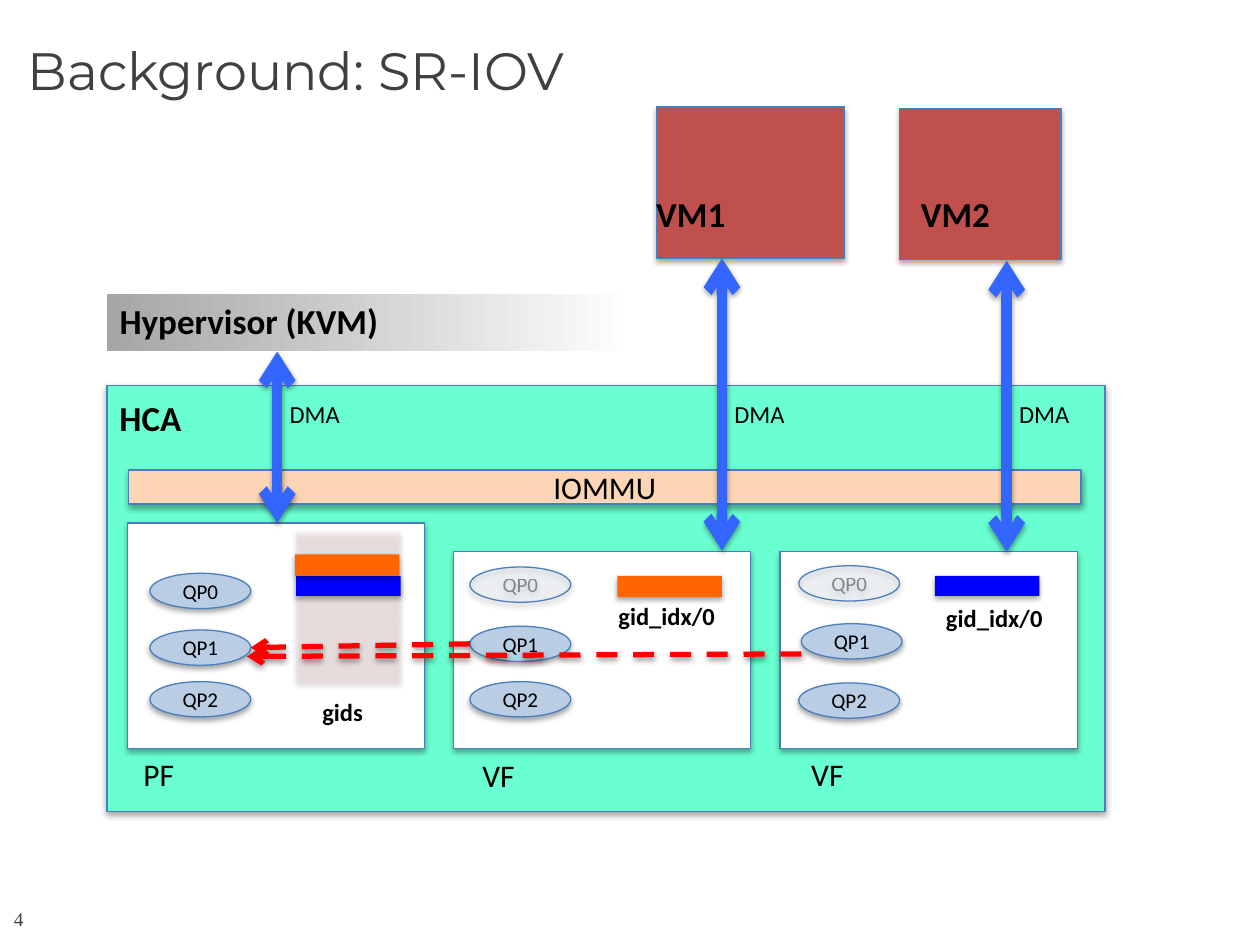
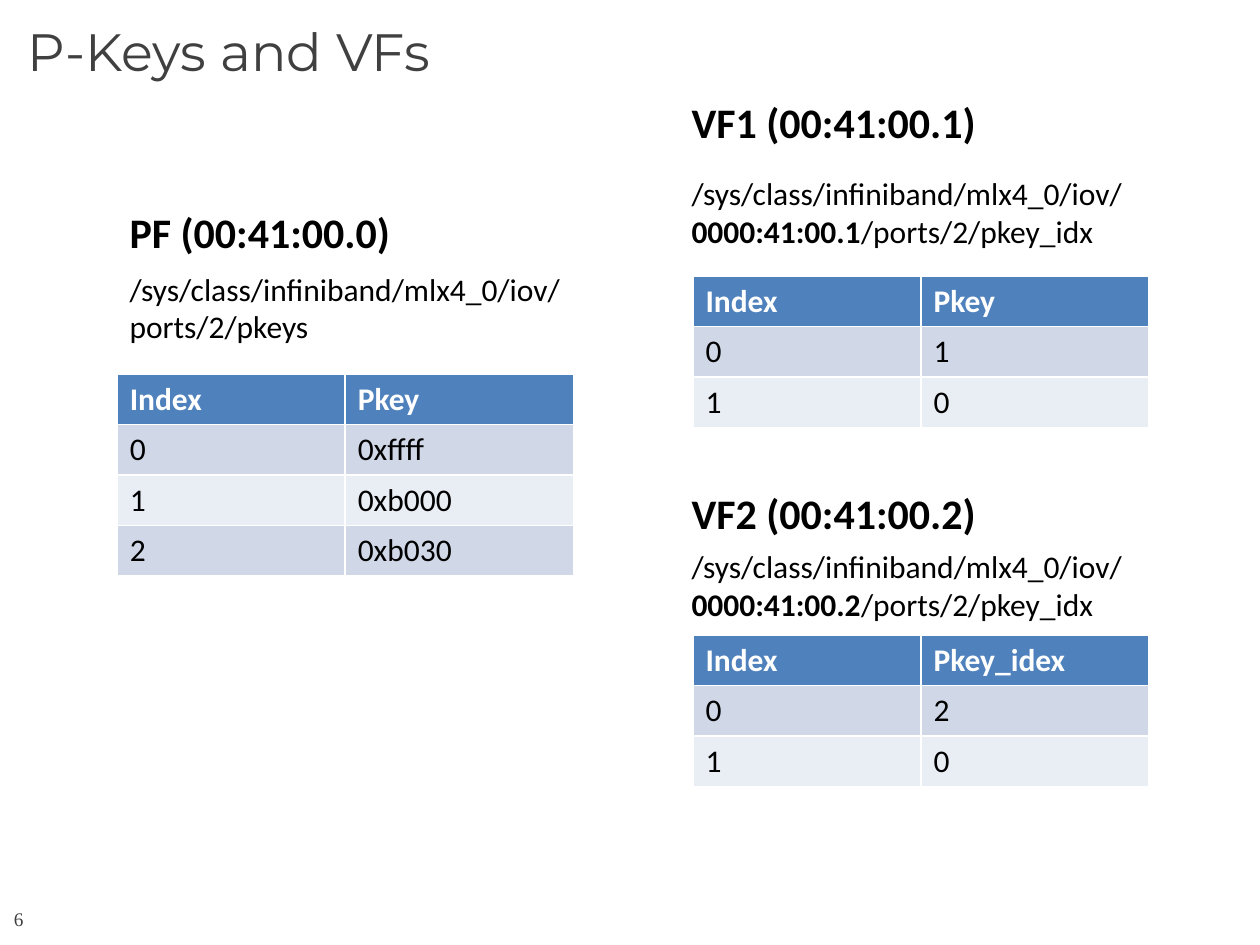
from lxml.etree import SubElement
from pptx import Presentation
from pptx.dml.color import RGBColor
from pptx.enum.dml import MSO_LINE
from pptx.enum.shapes import MSO_CONNECTOR, MSO_SHAPE
from pptx.enum.text import MSO_ANCHOR, MSO_AUTO_SIZE, PP_ALIGN
from pptx.oxml.ns import qn
from pptx.util import Emu, Pt

PX = 9144  # 100 px to the inch
COLORS = {
    "text": "000000", "title": "404040", "white": "FFFFFF", "outline": "4B7EBC",
    "adapter": "69FFD0", "iommu": "FCD5B5", "vm": "C0504D", "queue": "B9CDE5",
    "gid table": "F2DCDB", "gid 1": "FF6600", "gid 2": "0000FF",
    "dma": "3366FF", "proxy": "FF0000", "hypervisor": "A6A6A6",
    "header": "4F81BD", "odd row": "D0D8E8", "even row": "E9EDF4",
}
BODY_FONT, TITLE_FONT, NUMBER_FONT = "Calibri", "Montserrat", "Times New Roman"
SYSFS = "/sys/class/infiniband/mlx4_0/iov/"


def px(*lengths):
    return [Emu(length * PX) for length in lengths]


def color(name):
    return RGBColor.from_string(COLORS[name])


def add_run(para, text, size, bold=False, ink="text", font=BODY_FONT):
    span = para.add_run()
    span.text = text
    span.font.size = Pt(size)
    span.font.bold = bold
    span.font.name = font
    span.font.color.rgb = color(ink)
    return span


def set_opacity(element, percent):
    """Make the first colour inside the element partly transparent."""
    SubElement(element.find(".//" + qn("a:srgbClr")), qn("a:alpha"), val=str(percent * 1000))


def add_shadow(effects, distance=23000, opacity=35):
    shadow = SubElement(effects, qn("a:outerShdw"), blurRad="40000", dist=str(distance),
                        dir="5400000", rotWithShape="0")
    SubElement(shadow, qn("a:srgbClr"), val=COLORS["text"])
    set_opacity(shadow, opacity)


def add_block(page, place, fill, outlined=True, kind=MSO_SHAPE.RECTANGLE, opacity=None):
    block = page.shapes.add_shape(kind, *px(*place))
    block.fill.solid()
    block.fill.fore_color.rgb = color(fill)
    if opacity:
        set_opacity(block._element.spPr, opacity)
    if outlined:
        block.line.color.rgb = color("outline")
        block.line.width = Pt(0.75)
    else:
        block.line.fill.background()
    block.shadow.inherit = False
    add_shadow(block._element.spPr.find(qn("a:effectLst")))
    return block


def label_block(block, text, size):
    frame = block.text_frame
    frame.vertical_anchor = MSO_ANCHOR.MIDDLE
    para = frame.paragraphs[0]
    para.alignment = PP_ALIGN.CENTER
    return add_run(para, text, size)


def add_queue_pair(page, left, top, name, active=True):
    queue = add_block(page, (left, top, 80, 28), "queue", kind=MSO_SHAPE.OVAL,
                      opacity=None if active else 13)
    span = label_block(queue, name, 12)
    if not active:
        set_opacity(span._r, 42)


def add_fading_bar(page, place):
    bar = page.shapes.add_shape(MSO_SHAPE.RECTANGLE, *px(*place))
    bar.fill.gradient()
    bar.fill.gradient_angle = 0
    for stop, position, name in zip(bar.fill.gradient_stops, (0, 0.53), ("hypervisor", "white")):
        stop.position = position
        stop.color.rgb = color(name)
    bar.line.fill.background()
    bar.shadow.inherit = False


def add_arrow(page, start, end, ink, width, ends, dashed=False):
    arrow = page.shapes.add_connector(MSO_CONNECTOR.STRAIGHT, *px(*start, *end))
    arrow.line.color.rgb = color(ink)
    arrow.line.width = Pt(width)
    if dashed:
        arrow.line.dash_style = MSO_LINE.DASH
    properties = arrow._element.spPr
    for end_name in ends:
        SubElement(properties.find(qn("a:ln")), qn("a:" + end_name), type="arrow")
    add_shadow(SubElement(properties, qn("a:effectLst")), 20000, 38)


def add_text(page, place, size, *pieces, bold=False):
    """Add a text box; the pieces alternate between the given weight and the other."""
    box = page.shapes.add_textbox(*px(*place))
    box.text_frame.word_wrap = True
    for index, piece in enumerate(pieces):
        add_run(box.text_frame.paragraphs[0], piece, size, bold != (index % 2 == 1))


def add_key_table(page, left, top, rows):
    frame = page.shapes.add_table(len(rows), 2, *px(left, top, 362, 40 * len(rows)))
    for row_index, row in enumerate(rows):
        is_header = row_index == 0
        fill = "header" if is_header else "odd row" if row_index % 2 else "even row"
        for column_index, value in enumerate(row):
            cell = frame.table.cell(row_index, column_index)
            cell.fill.solid()
            cell.fill.fore_color.rgb = color(fill)
            add_run(cell.text_frame.paragraphs[0], value, 18, is_header,
                    "white" if is_header else "text")


def add_page(deck, title, title_top, number):
    page = deck.slides.add_slide(deck.slide_layouts[5])
    heading = page.shapes.title
    heading.left, heading.top, heading.width, heading.height = px(12, title_top, 900, 54)
    heading.text_frame.auto_size = MSO_AUTO_SIZE.NONE
    para = heading.text_frame.paragraphs[0]
    para.alignment = PP_ALIGN.LEFT
    para.line_spacing = 0.85
    add_run(para, title, 30, ink="title", font=TITLE_FONT)

    footer = page.shapes.add_textbox(*px(11, 722, 50, 17)).text_frame
    footer.margin_left = footer.margin_right = footer.margin_top = footer.margin_bottom = 0
    footer.word_wrap = True
    footer.paragraphs[0].line_spacing = 0.9
    add_run(footer.paragraphs[0], number, 11, ink="title", font=NUMBER_FONT)
    return page


def build_sriov_page(deck):
    page = add_page(deck, "Background: SR-IOV", 32, "4")
    add_block(page, (85, 306, 792, 338), "adapter")
    add_fading_bar(page, (85, 233, 792, 46))
    label_block(add_block(page, (102, 373, 756, 27), "iommu"), "IOMMU", 18)
    for place in ((101, 415, 236, 179), (360, 438, 236, 156), (619, 438, 236, 156)):
        add_block(page, place, "white")
    for place in ((521, 85, 149, 120), (714, 86, 128, 120)):
        add_block(page, place, "vm")

    queue_places = (
        ((119, 455), (119, 500), (119, 541)),
        ((373, 450), (373, 497), (373, 541)),
        ((634, 449), (636, 495), (634, 542)),
    )
    for function_index, places in enumerate(queue_places):
        for queue_index, (left, top) in enumerate(places):
            add_queue_pair(page, left, top, f"QP{queue_index}",
                           active=function_index == 0 or queue_index > 0)

    add_block(page, (235, 422, 83, 120), "gid table", outlined=False, opacity=39)
    for left, top, height, gid in ((235, 457, 16, "gid 2"), (742, 457, 16, "gid 2"),
                                   (234, 440, 17, "gid 1"), (490, 457, 17, "gid 1")):
        add_block(page, (left, top, 83, height), gid, outlined=False)

    for start, end in (((373, 511), (199, 514)), ((636, 519), (196, 521))):
        add_arrow(page, start, end, "proxy", 3, ["tailEnd"], dashed=True)
    for left, top, bottom in ((220, 279, 415), (573, 205, 437), (799, 207, 438)):
        add_arrow(page, (left, top), (left, bottom), "dma", 6, ["headEnd", "tailEnd"])
        add_text(page, (left, 312, 204, 34), 14, "DMA")

    for left, top, width, name in ((85, 310, 204, "HCA"), (85, 233, 275, "Hypervisor (KVM)"),
                                   (511, 148, 204, "VM1"), (721, 148, 131, "VM2")):
        add_text(page, (left, top, width, 44), 20, name, bold=True)
    for left, top, name in ((246, 548, "gids"), (481, 472, "gid_idx/0"), (741, 474, "gid_idx/0")):
        add_text(page, (left, top, 114, 34), 14, name, bold=True)
    for left, top, name in ((104, 594, "PF"), (373, 595, "VF"), (634, 594, "VF")):
        add_text(page, (left, top, 204, 40), 18, name)


def build_pkey_page(deck):
    page = add_page(deck, "P-Keys and VFs", 17, "6")
    add_text(page, (93, 159, 325, 50), 24, "PF (00:41:00.0)", bold=True)
    add_text(page, (93, 209, 404, 71), 18, SYSFS + "ports/2/pkeys")
    add_key_table(page, 93, 297, [("Index", "Pkey"), ("0", "0xffff"),
                                  ("1", "0xb000"), ("2", "0xb030")])

    virtual_functions = (
        (1, 72, 133, 219, "Pkey", "1"),
        (2, 382, 429, 504, "Pkey_idex", "2"),
    )
    for number, name_top, path_top, table_top, key_header, first_key in virtual_functions:
        add_text(page, (539, name_top, 282, 50), 24, f"VF{number} (00:41:00.{number})", bold=True)
        add_text(page, (539, path_top, 404, 71), 18,
                 SYSFS, f"0000:41:00.{number}", "/ports/2/pkey_idx")
        add_key_table(page, 550, table_top, [("Index", key_header), ("0", first_key), ("1", "0")])


def main():
    deck = Presentation()
    deck.slide_width, deck.slide_height = px(1000, 750)
    build_sriov_page(deck)
    build_pkey_page(deck)
    deck.save("out.pptx")


if __name__ == "__main__":
    main()
